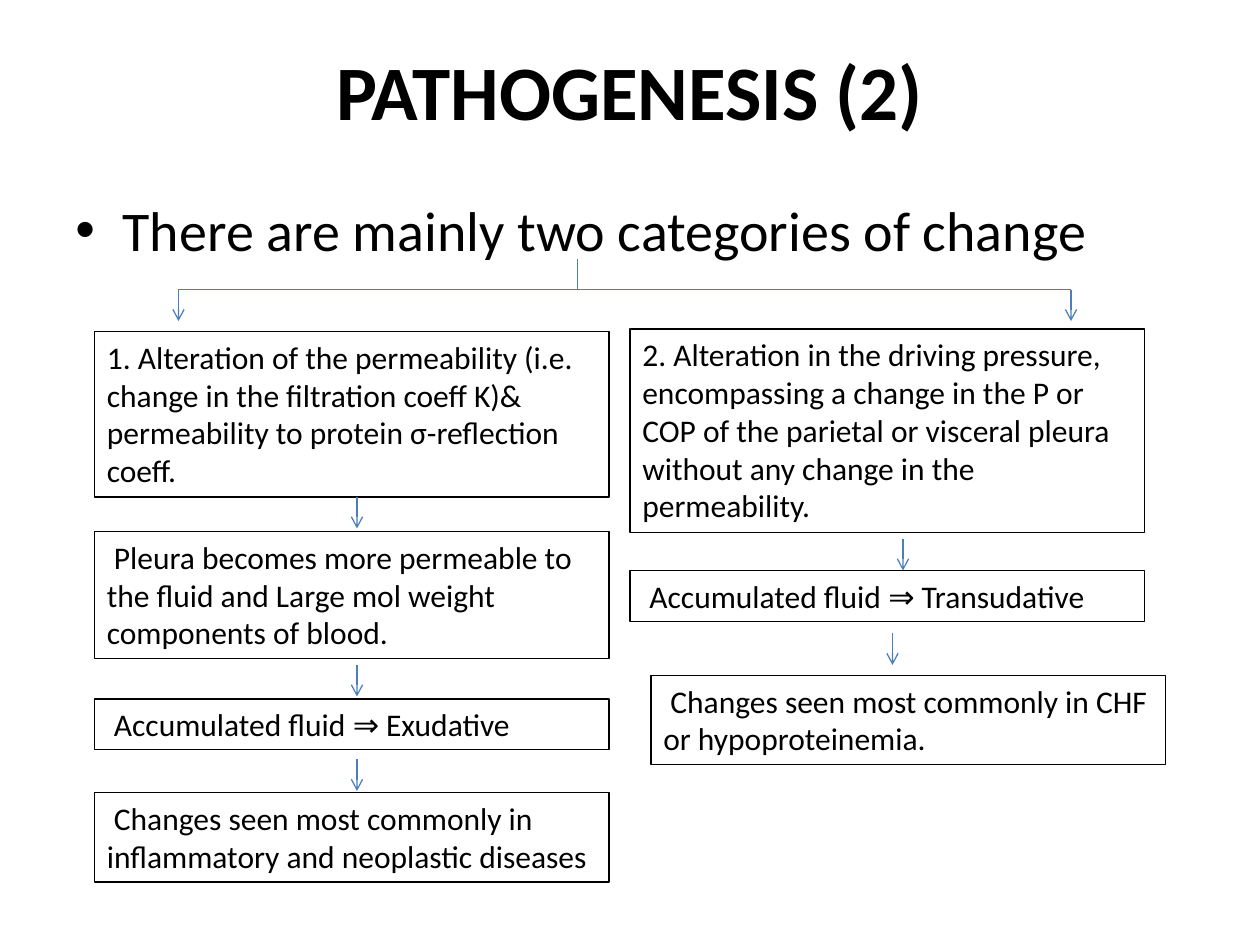
import pptx
import pptx.dml.color
import pptx.enum.shapes
import pptx.enum.text
import pptx.oxml
import pptx.oxml.ns
import pptx.util

Pt = pptx.util.Pt
BLACK = pptx.dml.color.RGBColor(0x00, 0x00, 0x00)
BLUE = pptx.dml.color.RGBColor(0x4B, 0x7E, 0xBC)
DRAWING = pptx.oxml.ns.nsdecls("a")

TITLE = "PATHOGENESIS (2)"
STATEMENT = "There are mainly two categories of change"
BOX_WIDTH = 294
LEFT_COLUMN, RIGHT_COLUMN = 54, 360
BOXES = [
    (LEFT_COLUMN, 189.5, 94.5, "1. Alteration of the permeability (i.e. change in the filtration coeff K)& "
     "permeability to protein σ-reflection coeff."),
    (LEFT_COLUMN, 303.75, 72.5, " Pleura becomes more permeable to the fluid and Large mol weight components of blood."),
    (LEFT_COLUMN, 399.5, 29, " Accumulated fluid ⇒ Exudative"),
    (LEFT_COLUMN, 453, 51, " Changes seen most commonly in inflammatory and neoplastic diseases"),
    (RIGHT_COLUMN, 188, 116.5, "2. Alteration in the driving pressure, encompassing a change in the P or COP "
     "of the parietal or visceral pleura without any change in the permeability."),
    (RIGHT_COLUMN, 326, 29, " Accumulated fluid ⇒ Transudative"),
    (RIGHT_COLUMN + 12, 386, 51, " Changes seen most commonly in CHF or hypoproteinemia."),
]
STEM_X, STEM_TOP, BRANCH_Y = 330, 148, 165.5
BRANCH_LEFT, BRANCH_RIGHT = 102, 612
ARROW_LENGTH = 18
ARROW_STARTS = [
    (BRANCH_LEFT, BRANCH_Y), (BRANCH_RIGHT, BRANCH_Y),
    (204, 284), (204, 380), (204, 434), (516, 308), (510, 362),
]


def write(shape, text, **formats):
    frame = shape.text_frame
    frame.word_wrap = True
    frame.text = text
    font = frame.paragraphs[0].runs[0].font
    font.color.rgb = BLACK
    for name, value in {"name": "Calibri", **formats}.items():
        setattr(font, name, value)
    return frame


def place(shape, left, top, width, height):
    bounds = {"left": left, "top": top, "width": width, "height": height}
    for name, value in bounds.items():
        setattr(shape, name, Pt(value))


def add_line(slide, start, end, arrow=False):
    connector = slide.shapes.add_connector(
        pptx.enum.shapes.MSO_CONNECTOR.STRAIGHT, *map(Pt, start + end))
    connector.line.color.rgb = BLUE
    connector.line.width = Pt(0.75)
    properties = connector._element.spPr
    if arrow:
        properties.find(pptx.oxml.ns.qn("a:ln")).append(
            pptx.oxml.parse_xml(f'<a:tailEnd {DRAWING} type="arrow"/>'))
    properties.append(pptx.oxml.parse_xml(f"<a:effectLst {DRAWING}/>"))


def add_statement(slide):
    shape = slide.shapes.add_textbox(Pt(36), Pt(108), Pt(648), Pt(50))
    paragraph = write(shape, STATEMENT, size=Pt(32)).paragraphs[0]
    paragraph.space_before = Pt(2)
    properties = paragraph._p.get_or_add_pPr()
    properties.set("marL", str(Pt(27)))
    properties.set("indent", str(Pt(-27)))
    for tag in ('buFont {} typeface="Arial"', 'buChar {} char="•"'):
        properties.append(pptx.oxml.parse_xml(f"<a:{tag.format(DRAWING)}/>"))


def add_box(slide, left, top, height, text):
    shape = slide.shapes.add_textbox(Pt(left), Pt(top), Pt(BOX_WIDTH), Pt(height))
    shape.line.color.rgb = BLACK
    shape.line.width = Pt(0.75)
    frame = write(shape, text, size=Pt(18))
    frame.auto_size = pptx.enum.text.MSO_AUTO_SIZE.SHAPE_TO_FIT_TEXT


def main():
    presentation = pptx.Presentation()
    presentation.slide_width, presentation.slide_height = Pt(720), Pt(540)
    slide = presentation.slides.add_slide(presentation.slide_layouts.get_by_name("Title Only"))
    title = slide.shapes.title
    place(title, 36, 6, 648, 90)
    write(title, TITLE, size=Pt(44), bold=True)
    add_statement(slide)
    add_line(slide, (STEM_X, STEM_TOP), (STEM_X, BRANCH_Y))
    add_line(slide, (BRANCH_LEFT, BRANCH_Y), (BRANCH_RIGHT, BRANCH_Y))
    for box in BOXES:
        add_box(slide, *box)
    for x, y in ARROW_STARTS:
        add_line(slide, (x, y), (x, y + ARROW_LENGTH), arrow=True)
    presentation.save("out.pptx")


if __name__ == "__main__":
    main()
